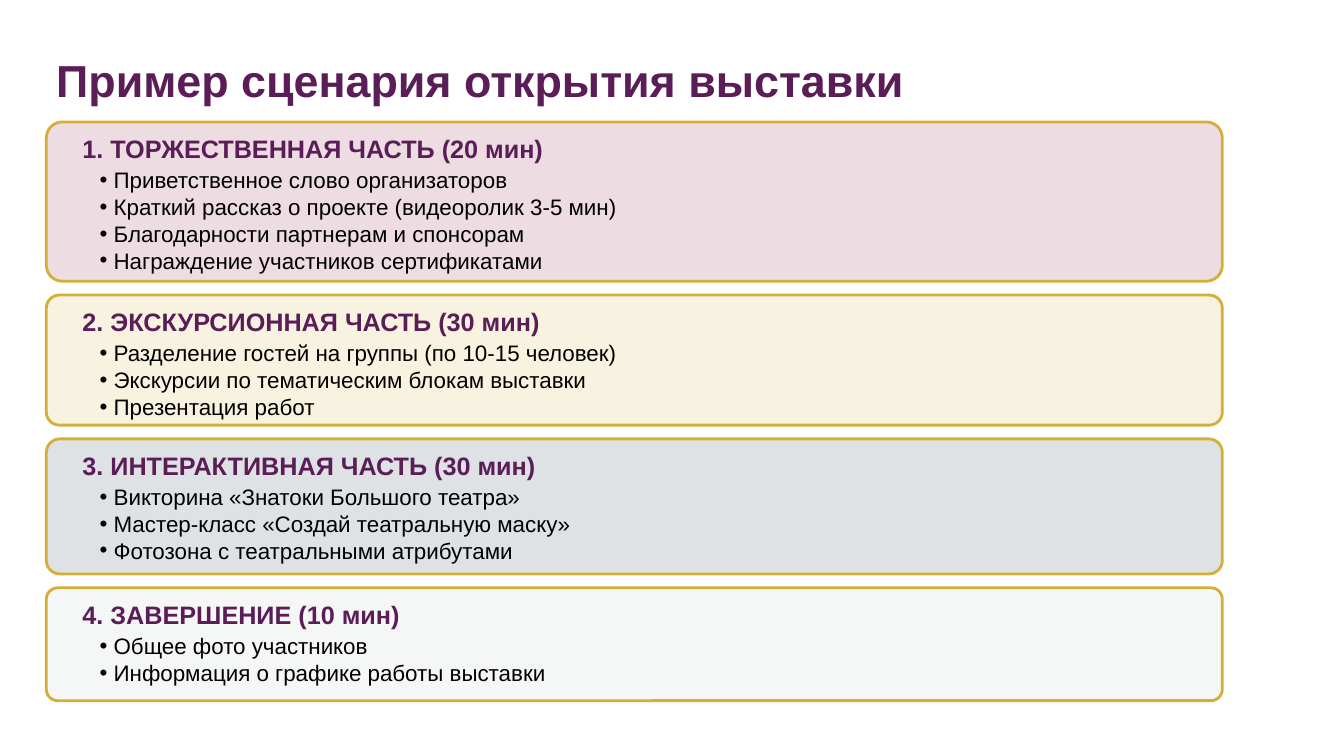
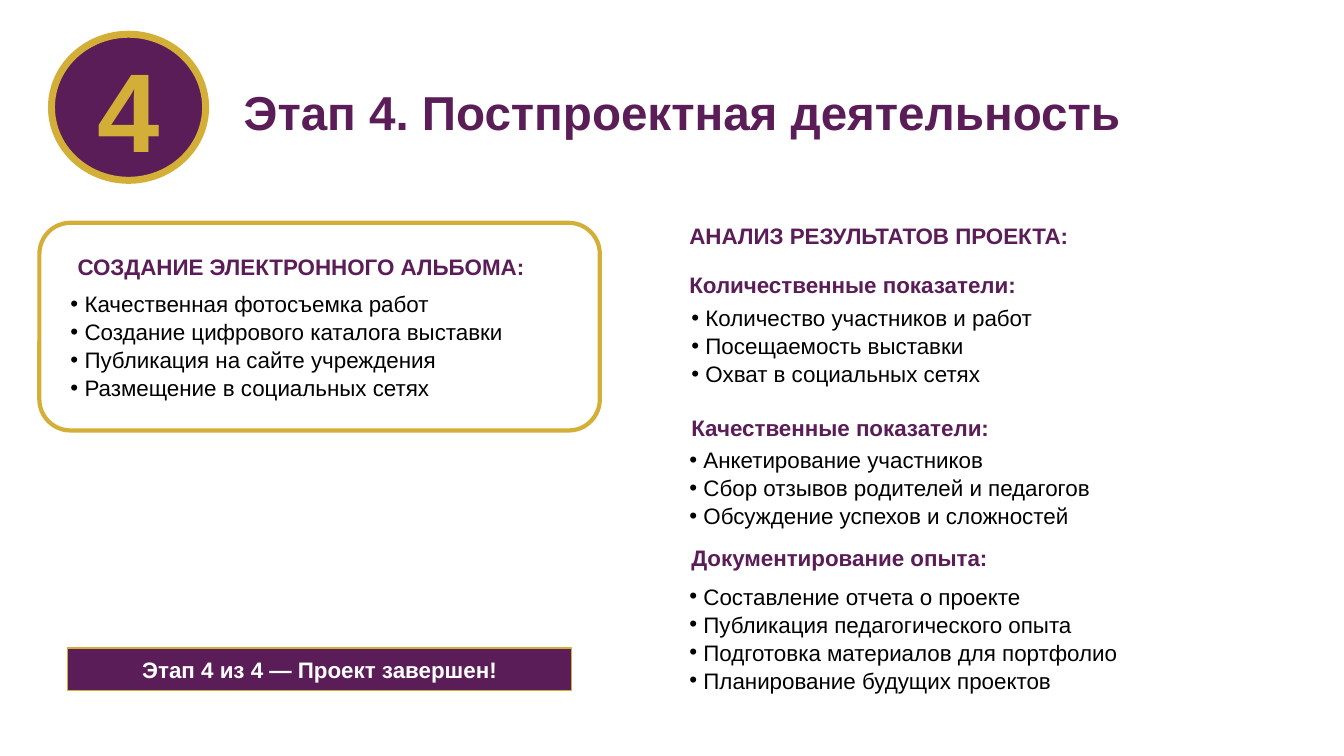
import pptx
import pptx.util
import pptx.dml.color
import pptx.enum.shapes
import pptx.enum.text
import pptx.oxml.ns
import lxml.etree

WIDTH, HEIGHT = pptx.util.Inches(13.33), pptx.util.Inches(7.5)
PLUM, GOLD, BLACK, WHITE = "5B1D57", "D4AF37", "000000", "FFFFFF"
SHAPE = pptx.enum.shapes.MSO_SHAPE
MIDDLE = pptx.enum.text.MSO_ANCHOR.MIDDLE
CENTER = pptx.enum.text.PP_ALIGN.CENTER
HEAD = {"name": "Arial", "bold": True}
BODY = {"name": "Arial", "size": pptx.util.Pt(16), "bold": False}
HANG = pptx.util.Inches(0.14)


def color(code):
    return pptx.dml.color.RGBColor.from_string(code)


def place(left, top, width, height):
    return (int(WIDTH * left / 100), int(HEIGHT * top / 100),
            int(WIDTH * width / 100), int(HEIGHT * height / 100))


def format_all(target, values):
    for key, value in values.items():
        setattr(target, key, value)


def style(para, look, code):
    format_all(para.font, look)
    para.font.color.rgb = color(code)


def child(parent, tag, **values):
    return lxml.etree.SubElement(parent, pptx.oxml.ns.qn(tag), values)


def text_box(slide, box):
    frame = slide.shapes.add_textbox(*place(*box)).text_frame
    frame.word_wrap = True
    return frame


def heading(slide, words, box, size):
    para = text_box(slide, box).paragraphs[0]
    para.text = words
    style(para, HEAD | {"size": pptx.util.Pt(size)}, PLUM)


def bullets(slide, items, box, pitch=None):
    frame = text_box(slide, box)
    for index, item in enumerate(items):
        para = frame.add_paragraph() if index else frame.paragraphs[0]
        para.text = item
        if pitch:
            para.line_spacing = pptx.util.Pt(pitch)
        props = para._p.get_or_add_pPr()
        props.set("marL", str(HANG))
        props.set("indent", str(-HANG))
        child(props, "a:buFont", typeface="Arial")
        child(props, "a:buChar", char="•")
        style(para, BODY, BLACK)


def panel(slide, kind, box, fill, width, round=None, alpha=None):
    shape = slide.shapes.add_shape(kind, *place(*box))
    shape.shadow.inherit = False
    shape.fill.solid()
    shape.fill.fore_color.rgb = color(fill)
    shape.line.color.rgb = color(GOLD)
    shape.line.width = pptx.util.Pt(width)
    if round:
        shape.adjustments[0] = round
    if alpha:
        paint = shape._element.spPr.find(pptx.oxml.ns.qn("a:solidFill"))[0]
        child(paint, "a:alpha", val=str(alpha * 1000))
    return shape


def label(shape, words, size, code):
    frame = shape.text_frame
    format_all(frame, {"word_wrap": False, "vertical_anchor": MIDDLE,
                       "margin_top": 0, "margin_bottom": 0})
    para = frame.paragraphs[0]
    para.text = words
    para.alignment = CENTER
    style(para, HEAD | {"size": pptx.util.Pt(size)}, code)


def opening(slide):
    heading(slide, "Пример сценария открытия выставки",
            (3.45, 6.27, 87.5, 8.53), 32)
    parts = [
        ("1. ТОРЖЕСТВЕННАЯ ЧАСТЬ (20 мин)", "8B1538", 21.07,
         ["Приветственное слово организаторов",
          "Краткий рассказ о проекте (видеоролик 3-5 мин)",
          "Благодарности партнерам и спонсорам",
          "Награждение участников сертификатами"]),
        ("2. ЭКСКУРСИОННАЯ ЧАСТЬ (30 мин)", GOLD, 17.2,
         ["Разделение гостей на группы (по 10-15 человек)",
          "Экскурсии по тематическим блокам выставки",
          "Презентация работ"]),
        ("3. ИНТЕРАКТИВНАЯ ЧАСТЬ (30 мин)", "2C3E50", 17.87,
         ["Викторина «Знатоки Большого театра»",
          "Мастер-класс «Создай театральную маску»",
          "Фотозона с театральными атрибутами"]),
        ("4. ЗАВЕРШЕНИЕ (10 мин)", "BDC3C7", 14.93,
         ["Общее фото участников",
          "Информация о графике работы выставки"]),
    ]
    top, gap = 16.13, 1.83
    for title, fill, height, items in parts:
        panel(slide, SHAPE.ROUNDED_RECTANGLE, (3.45, top, 87.5, height),
              fill, 2, 0.1, 15)
        heading(slide, title, (5.4, top + 0.8, 52, 5.33), 18)
        bullets(slide, items, (6.67, top + 5.2, 83.3, height - 5.2))
        top += height + gap


def closing(slide):
    heading(slide, "Этап 4. Постпроектная деятельность",
            (17.4, 10.27, 68.8, 8.93), 34)
    panel(slide, SHAPE.ROUNDED_RECTANGLE, (2.93, 29.47, 41.7, 27.47),
          WHITE, 3, 0.15)
    left, right, inset = 4.5, 50.55, 50.7
    groups = [
        ("СОЗДАНИЕ ЭЛЕКТРОННОГО АЛЬБОМА:", 5.03, 32.8, left, 37.6,
         ["Качественная фотосъемка работ",
          "Создание цифрового каталога выставки",
          "Публикация на сайте учреждения",
          "Размещение в социальных сетях"]),
        ("Количественные показатели:", right, 35.2, inset, 39.47,
         ["Количество участников и работ",
          "Посещаемость выставки",
          "Охват в социальных сетях"]),
        ("Качественные показатели:", inset, 54.13, right, 58.27,
         ["Анкетирование участников",
          "Сбор отзывов родителей и педагогов",
          "Обсуждение успехов и сложностей"]),
        ("Документирование опыта:", inset, 71.33, right, 76.27,
         ["Составление отчета о проекте",
          "Публикация педагогического опыта",
          "Подготовка материалов для портфолио",
          "Планирование будущих проектов"]),
    ]
    heading(slide, "АНАЛИЗ РЕЗУЛЬТАТОВ ПРОЕКТА:", (right, 28.67, 41.7, 4.93), 16)
    for title, title_x, title_y, list_x, list_y, items in groups:
        heading(slide, title, (title_x, title_y, 37.5, 4.93), 16)
        bullets(slide, items, (list_x, list_y, 37.5, 3.7 * len(items) + 1.33), 20)
    banner = panel(slide, SHAPE.RECTANGLE, (5.03, 85.73, 37.5, 5.6), PLUM, 1)
    label(banner, "Этап 4 из 4 — Проект завершен!", 16, WHITE)
    badge = panel(slide, SHAPE.OVAL, (3.83, 4.53, 11.47, 19.33), PLUM, 5)
    label(badge, "4", 80, GOLD)


def main():
    deck = pptx.Presentation()
    format_all(deck, {"slide_width": WIDTH, "slide_height": HEIGHT})
    for build in (opening, closing):
        build(deck.slides.add_slide(deck.slide_layouts[6]))
    deck.save("out.pptx")


if __name__ == "__main__":
    main()
